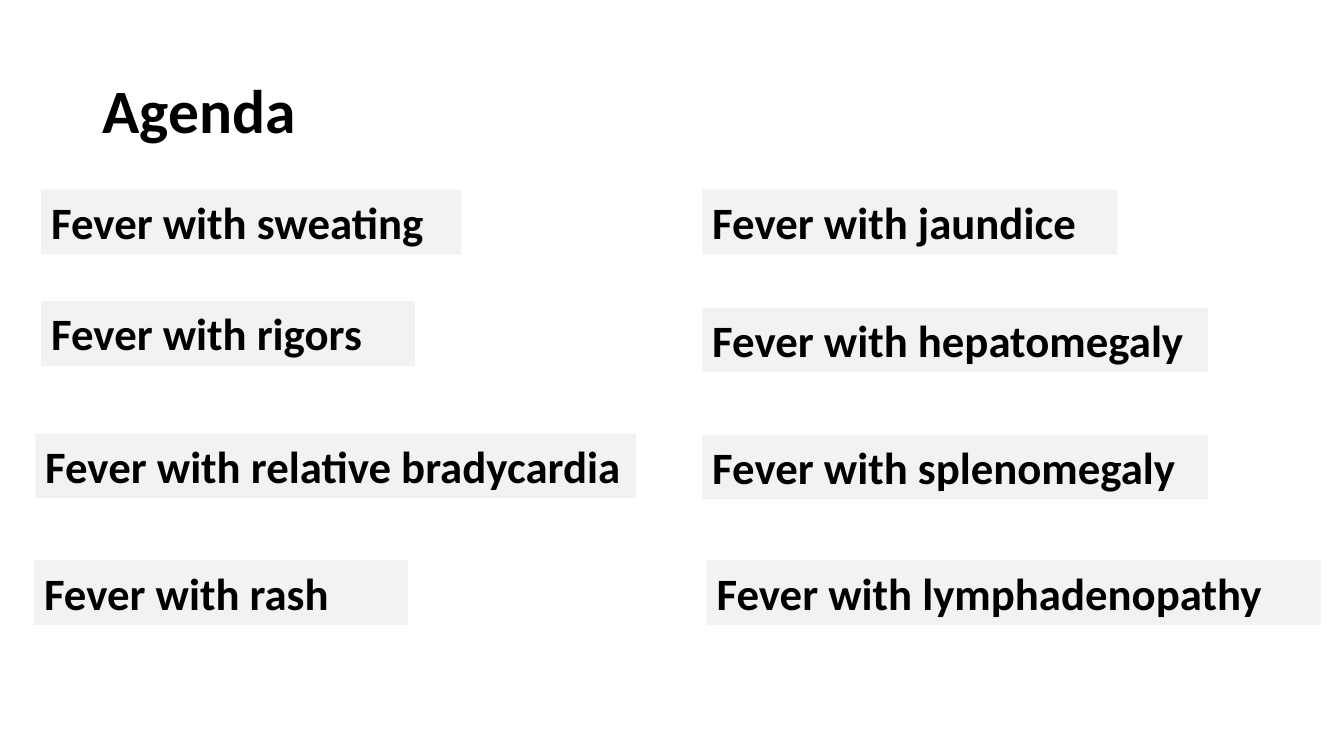
import dataclasses

import pptx
import pptx.dml.color
import pptx.enum.shapes
import pptx.enum.text
import pptx.shapes.autoshape
import pptx.slide
import pptx.util
from pptx.util import Cm


@dataclasses.dataclass(frozen=True)
class Theme:
    font: str = "Calibri"
    text: str = "000000"
    topic_fill: str = "F2F2F2"
    title_size: int = 44
    topic_size: int = 32


@dataclasses.dataclass(frozen=True)
class Topic:
    """An agenda entry; lengths are in centimetres."""
    symptom: str
    left: float
    top: float
    width: float


THEME = Theme()
TOPIC_HEIGHT = 1.63
TOPICS = (
    Topic("sweating", 1.04, 4.78, 10.59),
    Topic("rigors", 1.04, 7.59, 9.42),
    Topic("relative bradycardia", 0.89, 10.92, 15.14),
    Topic("rash", 0.86, 14.12, 9.42),
    Topic("jaundice", 17.7, 4.78, 10.46),
    Topic("hepatomegaly", 17.7, 7.75, 12.75),
    Topic("splenomegaly", 17.7, 10.95, 12.75),
    Topic("lymphadenopathy", 17.81, 14.12, 15.47),
)


def write(shape: pptx.shapes.autoshape.Shape, text: str, size: int,
          alignment: pptx.enum.text.PP_ALIGN) -> None:
    """Set one bold, wrapped, vertically centred line in the shape."""
    frame = shape.text_frame
    frame.text = text
    frame.word_wrap = True
    frame.vertical_anchor = pptx.enum.text.MSO_ANCHOR.MIDDLE
    paragraph = frame.paragraphs[0]
    paragraph.alignment = alignment
    font = paragraph.runs[0].font
    font.name = THEME.font
    font.size = pptx.util.Pt(size)
    font.bold = True
    font.color.rgb = pptx.dml.color.RGBColor.from_string(THEME.text)


def add_title(slide: pptx.slide.Slide, text: str) -> None:
    title = slide.shapes.add_textbox(Cm(2.34), Cm(1.02), Cm(29.21), Cm(3.68))
    write(title, text, THEME.title_size, pptx.enum.text.PP_ALIGN.LEFT)
    title.text_frame.paragraphs[0].line_spacing = 0.9


def add_topic(slide: pptx.slide.Slide, topic: Topic) -> None:
    bar = slide.shapes.add_shape(
        pptx.enum.shapes.MSO_SHAPE.RECTANGLE,
        Cm(topic.left), Cm(topic.top), Cm(topic.width), Cm(TOPIC_HEIGHT))
    bar.shadow.inherit = False
    bar.fill.solid()
    bar.fill.fore_color.rgb = pptx.dml.color.RGBColor.from_string(THEME.topic_fill)
    bar.line.fill.background()
    write(bar, f"Fever with {topic.symptom}", THEME.topic_size,
          pptx.enum.text.PP_ALIGN.JUSTIFY)
    bar.text_frame.auto_size = pptx.enum.text.MSO_AUTO_SIZE.SHAPE_TO_FIT_TEXT
    bar.text_frame.vertical_anchor = pptx.enum.text.MSO_ANCHOR.TOP


def main() -> None:
    presentation = pptx.Presentation()
    presentation.slide_width = Cm(33.87)
    presentation.slide_height = Cm(19.05)
    slide = presentation.slides.add_slide(presentation.slide_layouts[6])
    add_title(slide, "Agenda")
    for topic in TOPICS:
        add_topic(slide, topic)
    presentation.save("out.pptx")


if __name__ == "__main__":
    main()
